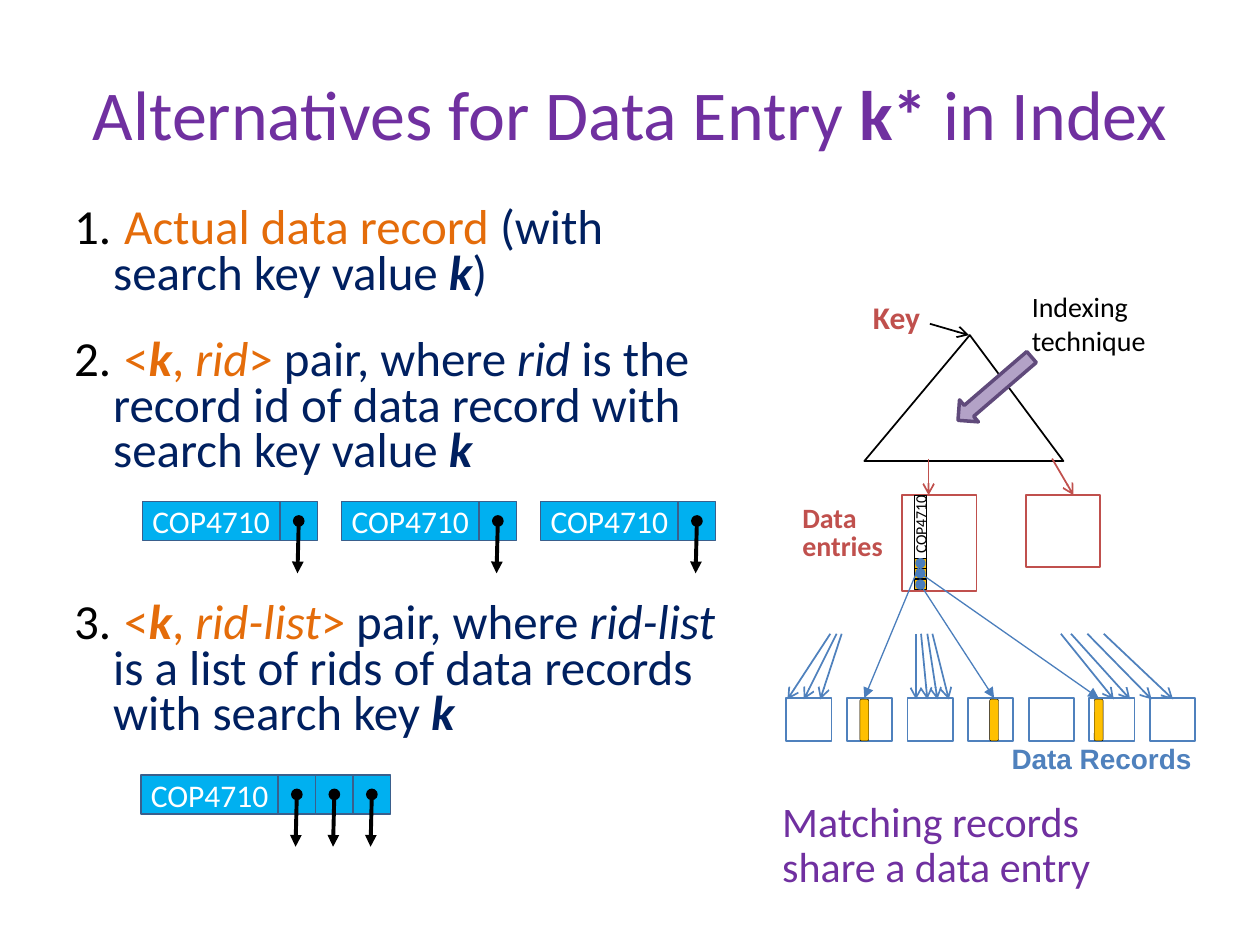
from collections import namedtuple

from lxml import etree
from pptx import Presentation
from pptx.dml.color import RGBColor
from pptx.enum.shapes import MSO_CONNECTOR, MSO_SHAPE
from pptx.enum.text import MSO_ANCHOR, PP_ALIGN
from pptx.oxml.ns import qn
from pptx.util import Inches, Pt

RECT, ROUNDED = MSO_SHAPE.RECTANGLE, MSO_SHAPE.ROUNDED_RECTANGLE
TRIANGLE, DOWN_ARROW = MSO_SHAPE.ISOSCELES_TRIANGLE, MSO_SHAPE.DOWN_ARROW
STRAIGHT = MSO_CONNECTOR.STRAIGHT
LEFT, CENTER, RIGHT = PP_ALIGN.LEFT, PP_ALIGN.CENTER, PP_ALIGN.RIGHT
TOP, MIDDLE = MSO_ANCHOR.TOP, MSO_ANCHOR.MIDDLE

CELL = 0.1
COLUMNS, ROWS = 100, 75
PURPLE, NAVY, ORANGE = "7030A0", "002060", "E46C0A"
RED, BLUE, LINK_BLUE, BLACK = "C0504D", "4F81BD", "4B7EBC", "000000"
AMBER, CYAN, CYAN_EDGE = "FFC000", "00B0F0", "3A5F8C"
INSETS = (0.1, 0.05, 0.1, 0.05)


class Box(namedtuple("Box", "x y w h")):
    def inner(self, x, y, w, h):
        return Box(self.x + x, self.y + y, w, h)

    def point(self, x, y):
        return self.x + x, self.y + y


def grid(*cells):
    return [Inches(cell * CELL) for cell in cells]


def rgb(value):
    return RGBColor.from_string(value)


def style_paragraph(paragraph, size, color, bold=None, font="Calibri", align=LEFT, spacing=None):
    paragraph.alignment = align
    paragraph.font.size, paragraph.font.name = Pt(size), font
    paragraph.font.bold = bold
    if color:
        paragraph.font.color.rgb = rgb(color)
    if spacing:
        paragraph.line_spacing = Pt(spacing)


def set_frame(frame, wrap=True, anchor=TOP, insets=INSETS):
    frame.word_wrap, frame.vertical_anchor = wrap, anchor
    (frame.margin_left, frame.margin_top,
     frame.margin_right, frame.margin_bottom) = map(Inches, insets)


def add_text(slide, box, lines, size, color, wrap=False, anchor=TOP, **style):
    frame = slide.shapes.add_textbox(*grid(*box)).text_frame
    set_frame(frame, wrap, anchor)
    frame.text = "\n".join(lines)
    for paragraph in frame.paragraphs:
        style_paragraph(paragraph, size, color, **style)
    return frame


def add_runs(paragraph, runs):
    for text, color, flags in runs:
        run = paragraph.add_run()
        run.text = text
        run.font.bold, run.font.italic = "b" in flags, "i" in flags
        if color:
            run.font.color.rgb = rgb(color)


def add_block(slide, box, fill, line, width, kind=RECT):
    block = slide.shapes.add_shape(kind, *grid(*box))
    block.shadow.inherit = False
    if fill:
        block.fill.solid()
        block.fill.fore_color.rgb = rgb(fill)
    else:
        block.fill.background()
    block.line.color.rgb, block.line.width = rgb(line), Pt(width)
    return block


def add_arrow(slide, start, end, color, width, tail="triangle", head=None):
    arrow = slide.shapes.add_connector(STRAIGHT, *grid(*start, *end))
    arrow.line.color.rgb, arrow.line.width = rgb(color), Pt(width)
    edge = arrow._element.spPr.get_or_add_ln()
    for tag, kind in (("a:headEnd", head), ("a:tailEnd", tail)):
        if kind:
            etree.SubElement(edge, qn(tag), type=kind)
    etree.SubElement(arrow._element.spPr, qn("a:effectLst"))


def draw_title(slide, box):
    paragraph = add_text(slide, box, [""], 40, PURPLE, wrap=True, anchor=MIDDLE,
                         align=CENTER, spacing=43).paragraphs[0]
    add_runs(paragraph, [("Alternatives for Data Entry ", None, ""),
                         ("k* ", None, "b"), ("in Index", None, "")])


def number_paragraph(paragraph):
    properties = paragraph._p.get_or_add_pPr()
    properties.set("marL", str(Inches(0.81)))
    properties.set("indent", str(-Inches(0.31)))
    color = etree.Element(qn("a:buClr"))
    etree.SubElement(color, qn("a:srgbClr"), val=BLACK)
    number = etree.Element(qn("a:buAutoNum"), type="arabicPeriod")
    defaults = properties.find(qn("a:defRPr"))
    defaults.addprevious(color)
    defaults.addprevious(number)


def pair_runs(name, explanation, ending):
    return [(" <", ORANGE, ""), ("k", ORANGE, "bi"), (", ", ORANGE, ""),
            (name, ORANGE, "i"), ("> ", ORANGE, ""), ("pair, where ", NAVY, ""),
            (name, NAVY, "i"), (explanation + ending, NAVY, ""), ("k", NAVY, "bi")]


def draw_alternatives(slide, box):
    alternatives = [
        (0, [(" Actual data record ", ORANGE, ""), ("(with search key value ", NAVY, ""),
             ("k", NAVY, "bi"), (")", NAVY, "")]),
        (23.6, pair_runs("rid", " is the record id of data record", " with search key value ")),
        (72.2, pair_runs("rid-list", " is a list of rids of data records", " with search key ")),
    ]
    frame = add_text(slide, box, [""] * len(alternatives), 28, None, wrap=True, spacing=26)
    for paragraph, (gap, runs) in zip(frame.paragraphs, alternatives):
        paragraph.space_before = Pt(gap)
        number_paragraph(paragraph)
        add_runs(paragraph, runs)


def draw_entry(slide, box, pointers):
    pointer_width = box.h * 0.96
    key_width = box.w - pointers * pointer_width
    key = add_block(slide, box.inner(0, 0, key_width, box.h), CYAN, CYAN_EDGE, 1)
    set_frame(key.text_frame, anchor=MIDDLE, insets=(0, 0.05, 0, 0.05))
    key.text_frame.text = "COP4710"
    style_paragraph(key.text_frame.paragraphs[0], 18, "FFFFFF", align=CENTER)
    for index in range(pointers):
        left = key_width + index * pointer_width
        middle = left + pointer_width / 2
        add_block(slide, box.inner(left, 0, pointer_width, box.h), CYAN, CYAN_EDGE, 1)
        add_arrow(slide, box.point(middle, box.h / 2), box.point(middle - 0.1, box.h * 1.84),
                  BLACK, 2.25, head="oval")


def draw_index(slide, box):
    tree = add_block(slide, box.inner(6.6, 4.6, 15.8, 10), None, BLACK, 1, TRIANGLE)
    tree.adjustments[0] = 0.53
    add_arrow(slide, box.point(11.8, 3.7), box.point(14.9, 4.6), BLACK, 1, "arrow")
    for left, height, start, end in ((9.6, 7.6, 11.7, 11.7), (19.4, 5.7, 21.5, 23.2)):
        add_block(slide, box.inner(left, 17.3, 5.9, height), None, RED, 1)
        add_arrow(slide, box.point(start, 14.4), box.point(end, 17.3), RED, 1, "arrow")
    add_text(slide, box.inner(0.7, 17.7, 8.4, 5.5), ["Data", "entries"], 16, RED,
             bold=True, spacing=16)
    add_text(slide, box.inner(6.3, 1.2, 5.8, 4), ["Key"], 18, RED, bold=True)
    pointer = add_block(slide, box.inner(15.8, 5, 2.3, 7.7), "B3A2C7", "604A7B", 2, DOWN_ARROW)
    pointer.rotation = 49.3
    add_text(slide, box.inner(18.9, 0.5, 11.1, 6.4), ["Indexing", "technique"], 16, BLACK)

    key = add_block(slide, box.inner(10.6, 17.3, 0.9, 5.9), None, BLACK, 0.5)
    set_frame(key.text_frame, anchor=MIDDLE, insets=(0.1, 0, 0.1, 0.07))
    key.text_frame._txBody.bodyPr.set("vert", "vert270")
    key.text_frame.text = "COP4710"
    style_paragraph(key.text_frame.paragraphs[0], 9, BLACK, align=RIGHT)
    for index in range(3):
        add_block(slide, box.inner(10.6, 22.3 + index * 0.85, 0.9, 0.8), AMBER, BLACK, 0.5)


def draw_records(slide, box):
    fans = [(3.9, 0.5), (4.4, 1.8), (4.8, 3.1),
            (10.7, 10.7), (11.1, 11.6), (11.6, 12.4), (12, 13.3),
            (22.2, 26.4), (23, 27.7), (24.3, 29.4), (25.6, 31.1)]
    matches = [(0.7, 6.6), (2.4, 16.9), (1.5, 25.2)]
    for index in range(7):
        add_block(slide, box.inner(0.4 + index * 4.81, 11.4, 3.6, 3.4), None, BLUE, 1)
    for start, end in fans:
        add_arrow(slide, box.point(start, 6.3), box.point(end, 11.5), BLUE, 1, "arrow")
    for rid_row, record in matches:
        add_arrow(slide, box.point(11.05, rid_row), box.point(record, 11.4),
                  LINK_BLUE, 0.75, head="oval")
        add_block(slide, box.inner(record - 0.35, 11.5, 0.7, 3.3), AMBER, BLACK, 0.25, ROUNDED)
    add_text(slide, box.inner(17.3, 14.4, 16.4, 3.7), ["Data Records"], 16, BLUE,
             bold=True, font="Arial")


def draw_conclusion(slide, box):
    add_text(slide, box, ["Matching records share a data entry"], 24, PURPLE,
             wrap=True, spacing=26)


def main():
    deck = Presentation()
    deck.slide_width, deck.slide_height = grid(COLUMNS, ROWS)
    slide = deck.slides.add_slide(deck.slide_layouts[6])
    draw_alternatives(slide, Box(-0.1, 16.1, 60, 44))
    for index in range(3):
        draw_entry(slide, Box(11.3 + index * 15.8, 39.8, 13.9, 3.1), 1)
    draw_entry(slide, Box(11.2, 61.5, 19.8, 3.1), 3)
    draw_title(slide, Box(5, 5.2, 90, 8.2))
    draw_index(slide, Box(62, 22, 33, 26))
    draw_records(slide, Box(62, 44, 33, 18))
    draw_conclusion(slide, Box(61.1, 63, 31.9, 8.3))
    deck.save("out.pptx")


if __name__ == "__main__":
    main()
